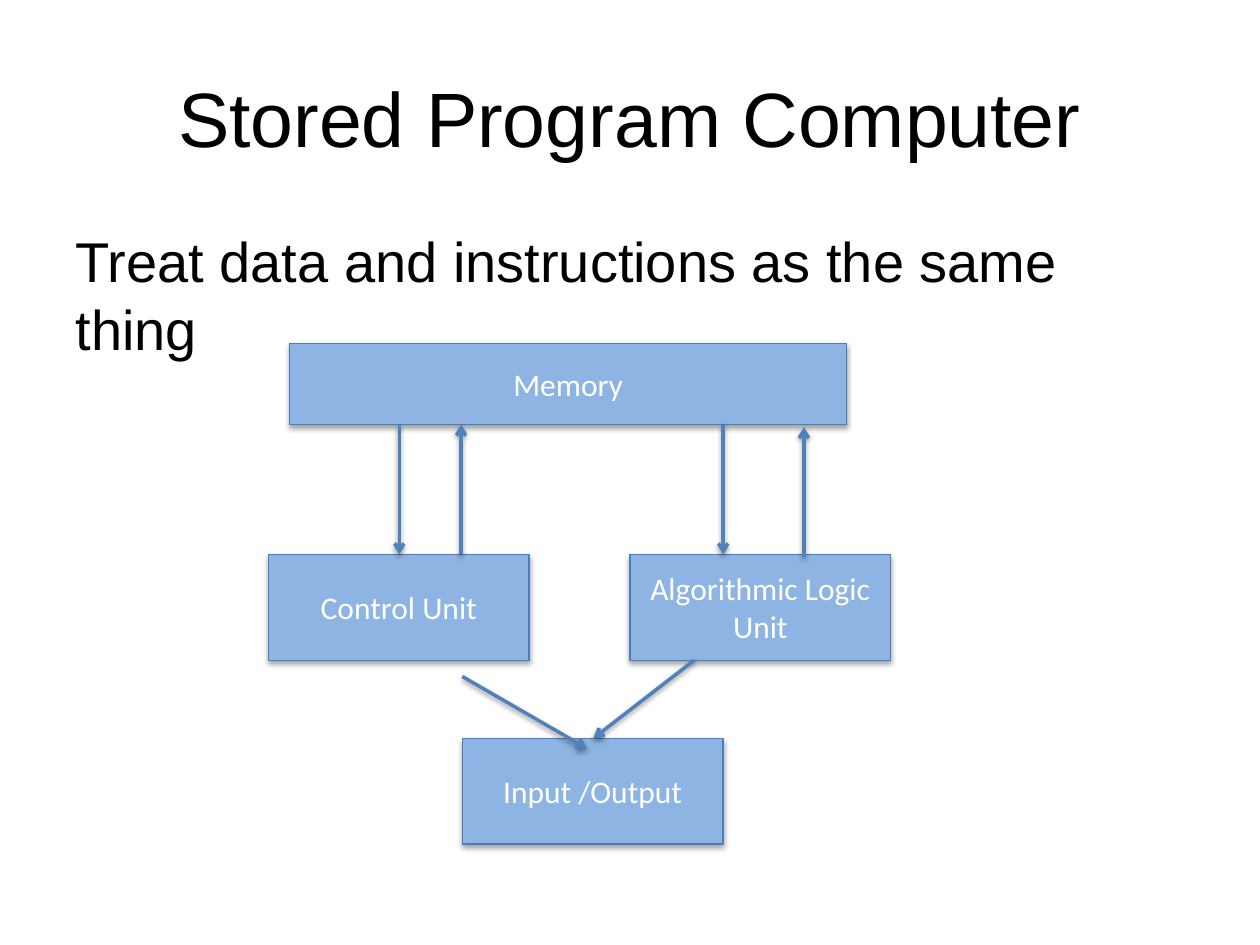
from lxml import etree
from pptx import Presentation
from pptx import util as u
from pptx.dml.color import RGBColor
from pptx.enum import shapes, text
from pptx.oxml import ns

Pt = u.Pt
color = RGBColor.from_string


def style_text(shape, words, size, font, ink, align, anchor):
    frame = shape.text_frame
    frame.word_wrap = True
    frame.vertical_anchor = anchor
    para = frame.paragraphs[0]
    para.alignment = align
    span = para.add_run()
    span.text = words
    for name, value in {"size": Pt(size), "name": font}.items():
        setattr(span.font, name, value)
    span.font.color.rgb = color(ink)
    return para


def add_shadow(shape, distance, opacity):
    effects = etree.SubElement(shape._element.spPr, ns.qn("a:effectLst"))
    shadow = etree.SubElement(effects, ns.qn("a:outerShdw"), blurRad=str(Pt(3.1)),
                              dist=str(Pt(distance)), dir="5400000", rotWithShape="0")
    black = etree.SubElement(shadow, ns.qn("a:srgbClr"), val="000000")
    etree.SubElement(black, ns.qn("a:alpha"), val=str(opacity * 1000))


deck = Presentation()
deck.slide_width, deck.slide_height = Pt(720), Pt(540)
page = deck.slides.add_slide(deck.slide_layouts[1])
title, body = page.placeholders
center, left = text.PP_ALIGN.CENTER, text.PP_ALIGN.LEFT
middle, top = text.MSO_ANCHOR.MIDDLE, text.MSO_ANCHOR.TOP

for holder, place, words, size, align, anchor in [
    (title, (36, 21.6, 648, 90), "Stored Program Computer", 44, center, middle),
    (body, (36, 126, 648, 356.4), "Treat data and instructions as the same thing", 32, left, top),
]:
    for name, value in zip(("left", "top", "width", "height"), place):
        setattr(holder, name, Pt(value))
    para = style_text(holder, words, size, "Arial", "000000", align, anchor)
    props = para._p.get_or_add_pPr()
    props.set("marL", "0")
    props.set("indent", "0")
    etree.SubElement(props, ns.qn("a:buNone"))

unit_size = (149, 60.5)
memory_bottom, unit_top, unit_bottom, output_top = 242.6, 316.8, 377.3, 421.9
for words, place in [
    ("Memory", (165.6, 196.5, 318.2, 46.1)),
    ("Control Unit", (153.4, unit_top, *unit_size)),
    ("Algorithmic Logic Unit", (360, unit_top, *unit_size)),
    ("Input /Output", (264.2, output_top, *unit_size)),
]:
    box = page.shapes.add_shape(shapes.MSO_SHAPE.RECTANGLE, *map(Pt, place))
    box.fill.solid()
    box.fill.fore_color.rgb = color("8EB4E3")
    box.line.color.rgb = color("4B7EBC")
    box.line.width = Pt(0.75)
    add_shadow(box, 1.8, 35)
    style_text(box, words, 18, "Calibri", "FFFFFF", center, middle)

for ends in [
    (228.2, memory_bottom, 228.2, unit_top),
    (413.3, memory_bottom, 413.3, unit_top),
    (264.2, 386.6, 335.5, 427.7),
    (396.7, unit_bottom, 339.1, output_top),
    (263.5, unit_top, 263.5, memory_bottom),
    (459.4, 318.2, 459.4, 244.1),
]:
    arrow = page.shapes.add_connector(shapes.MSO_CONNECTOR.STRAIGHT, *map(Pt, ends))
    arrow.line.color.rgb = color("4F81BD")
    arrow.line.width = Pt(2)
    etree.SubElement(arrow.line._get_or_add_ln(), ns.qn("a:tailEnd"), type="arrow")
    add_shadow(arrow, 1.6, 38)

deck.save("out.pptx")
